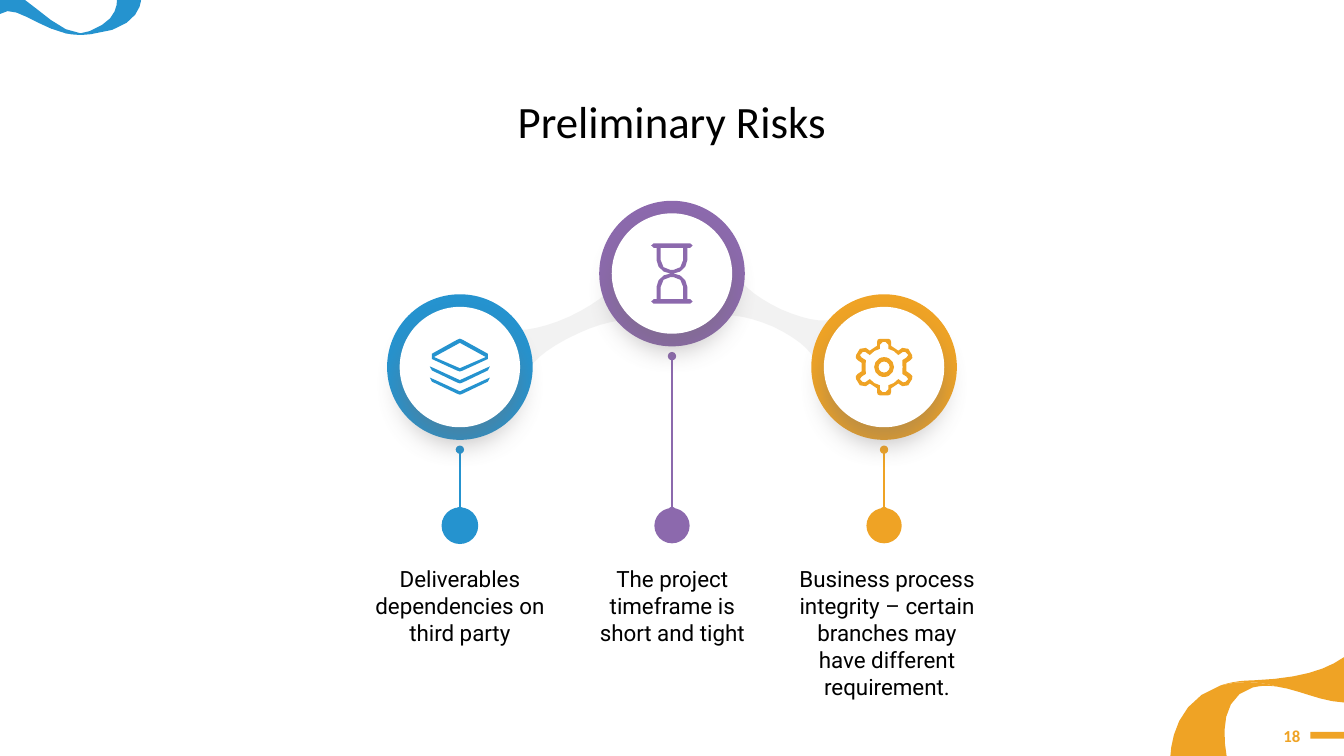
"""Build a slide that shows three preliminary project risks as linked icons."""
import math

import pptx
import pptx.dml.color
import pptx.enum.shapes
import pptx.enum.text
import pptx.oxml
import pptx.oxml.ns
import pptx.util

Pt = pptx.util.Pt
RGBColor = pptx.dml.color.RGBColor
SHAPES = pptx.enum.shapes.MSO_SHAPE
ALIGN = pptx.enum.text.PP_ALIGN

BLUE = RGBColor(0x25, 0x93, 0xCF)
PURPLE = RGBColor(0x8C, 0x69, 0xAD)
ORANGE = RGBColor(0xEF, 0xA3, 0x25)
GREY = RGBColor(0xF2, 0xF2, 0xF2)
WHITE = RGBColor(0xFF, 0xFF, 0xFF)
BLACK = RGBColor(0, 0, 0)
NAMESPACE = pptx.oxml.ns.nsdecls("a")
STEP_LENGTH, MOST_STEPS = 5, 6
RING_SIZE, DISC_SIZE, DOT_SIZE, HUB_SIZE = 104, 86, 25.2, 14.2
DOT_CENTRE, STEM_END, STEM_GAP, TEXT_TOP = 375.5, 365, 59, 400.3


def trace(start, *segments):
    """Return outline points for lines (x, y) and cubic curves (six numbers)."""
    points = [start]
    for segment in segments:
        if len(segment) == 2:
            points.append(segment)
            continue
        controls = [points[-1], segment[:2], segment[2:4], segment[4:]]
        length = sum(math.dist(a, b) for a, b in zip(controls, controls[1:]))
        steps = min(MOST_STEPS, max(1, round(length / STEP_LENGTH)))
        for step in range(1, steps + 1):
            t = step / steps
            weights = ((1 - t) ** 3, 3 * t * (1 - t) ** 2, 3 * t * t * (1 - t), t ** 3)
            points.append(tuple(sum(weight * control[axis] for weight, control in zip(weights, controls))
                                for axis in (0, 1)))
    return points


def flip(points, x_sign, y_sign):
    """Return the points with the signs of their axes changed."""
    return [(x * x_sign, y * y_sign) for x, y in points]


def mirror_sides(half):
    """Close a right half with its left half."""
    return half + [(-x, y) for x, y in reversed(half) if x]


def mirror_quarter(quarter):
    """Close an upper right quarter with the other three."""
    return mirror_sides(quarter + [(x, -y) for x, y in reversed(quarter) if y])


def hourglass_contours():
    """Return the outer edge and both bulbs of the hourglass."""
    edge = trace((13, -21.6), (14.8, -20), (13, -18.3), (11, -18.3), (11, -9.5), (11, -4.5, 6, 0, 1, 0))
    bulb = mirror_sides(trace((8, -18.3), (8, -9.5), (8, -5.5, 5, -2.5, 1, -2.5)))
    return [mirror_quarter(edge), bulb, flip(bulb, 1, -1)]


def gear_contours():
    """Return the outer and inner edges of the gear."""
    outer = trace((3, -20.2), (4.5, -19.6), (5, -18), (5, -15.2), (7, -14.6, 8.7, -13.4, 10.2, -11.7),
                  (13, -13.7), (15.2, -14.8, 16.2, -14.6, 17.3, -13), (20, -8.6),
                  (20.2, -6.5), (18.9, -5), (16, -3))
    inner = trace((1, -18), (3, -16), (3, -13), (6, -12.4, 8, -11, 10.2, -8.6),
                  (13.5, -10.9), (15.2, -10.8), (17.3, -8.6), (16, -6.8), (13, -4.9), (13.2, 0))
    return [mirror_quarter(outer), mirror_quarter(inner)]


def layers_contours():
    """Return a diamond and two chevrons below it."""
    outer = trace((0, -20.3), (2, -19.5), (20, -9.5), (21.7, -8.6, 21.7, -6.5, 20, -5.8), (2, 2.5), (0, 3.2))
    inner = [(0, -17.3), (18.5, -7.2), (0, 0.8)]
    chevron = [(0, 9.3), (18.5, 0.8), (21.5, -0.5), (20, 2.4), (2, 11), (0, 11.7)]
    lower = [(x, y + 8) for x, y in chevron]
    return [mirror_sides(half) for half in (outer, inner, chevron, lower)]


def paint(shape, colour):
    """Fill a shape and remove its line and shadow."""
    shape.shadow.inherit = False
    shape.fill.solid()
    shape.fill.fore_color.rgb = colour
    shape.line.fill.background()


def add_outline(slide, contours, colour, x=0, y=0):
    """Draw closed contours, moved by x and y, as one shape."""
    placed = [[(Pt(x + px), Pt(y + py)) for px, py in contour] for contour in contours]
    builder = slide.shapes.build_freeform(*placed[0][0], scale=1.0)
    builder.add_line_segments(placed[0][1:], close=True)
    for contour in placed[1:]:
        builder.move_to(*contour[0])
        builder.add_line_segments(contour[1:], close=True)
    paint(builder.convert_to_shape(), colour)


def add_circle(slide, x, y, size, colour, preset=SHAPES.OVAL):
    """Draw a filled round shape around a centre."""
    circle = slide.shapes.add_shape(preset, Pt(x - size / 2), Pt(y - size / 2), Pt(size), Pt(size))
    paint(circle, colour)
    return circle


def add_disc_shadow(disc):
    """Give the disc a soft shadow that falls straight down."""
    properties = disc.element.spPr
    properties.remove(properties.find(pptx.oxml.ns.qn("a:effectLst")))
    properties.append(pptx.oxml.parse_xml(
        f'<a:effectLst {NAMESPACE}><a:outerShdw blurRad="{Pt(18)}" dist="{Pt(12)}" dir="5400000" '
        'algn="t" rotWithShape="0"><a:srgbClr val="767171"><a:alpha val="40000"/></a:srgbClr>'
        '</a:outerShdw></a:effectLst>'))


def add_stem(slide, x, top, bottom, colour):
    """Draw a vertical line with a round head at both ends."""
    stem = slide.shapes.add_connector(pptx.enum.shapes.MSO_CONNECTOR.STRAIGHT,
                                      Pt(x), Pt(top), Pt(x), Pt(bottom))
    stem.line.color.rgb = colour
    stem.line.width = Pt(1)
    outline = stem.element.spPr.find(pptx.oxml.ns.qn("a:ln"))
    for end in ("headEnd", "tailEnd"):
        outline.append(pptx.oxml.parse_xml(f'<a:{end} {NAMESPACE} type="oval"/>'))
    stem.element.spPr.append(pptx.oxml.parse_xml(f"<a:effectLst {NAMESPACE}/>"))


def add_text(slide, box, text, font, size, colour=BLACK, alignment=ALIGN.CENTER, wrap=True, bold=False):
    """Add a text box with one run and return its frame."""
    frame = slide.shapes.add_textbox(*map(Pt, box)).text_frame
    frame.word_wrap = wrap
    paragraph = frame.paragraphs[0]
    paragraph.alignment = alignment
    run = paragraph.add_run()
    run.text = text
    run.font.name = font
    run.font.size = Pt(size)
    run.font.bold = bold
    run.font.color.rgb = colour
    return frame


def add_risk(slide, x, y, colour, contours, text, text_left, text_width, text_height):
    """Draw one risk: ring, icon, stem, dot and text."""
    add_stem(slide, x, y + STEM_GAP, STEM_END, colour)
    dot = add_circle(slide, x, DOT_CENTRE, DOT_SIZE, colour)
    if colour == BLUE:
        dot.line.color.rgb = colour
        dot.line.width = Pt(1)
    add_circle(slide, x, y, RING_SIZE, colour)
    add_disc_shadow(add_circle(slide, x, y, DISC_SIZE, WHITE))
    add_outline(slide, contours, colour, x, y)
    add_text(slide, (text_left, TEXT_TOP, text_width, text_height), text, "Roboto", 16)


def add_links(slide):
    """Draw the two grey bands between the rings."""
    right = trace((558, 221), (573.1, 227.5, 585.4, 230.4, 594, 228.2), (581, 255.6),
                  (578.2, 249.1, 567.4, 240.5, 552.2, 233.3), (537.1, 226.8, 522.7, 223.9, 516.2, 226.1),
                  (528.5, 198.7), (531.4, 205.2, 542.9, 213.8, 558, 221))
    left = trace((406.8, 226.1), (389.5, 234, 373.7, 236.9, 365.8, 235.4), (378.7, 262.8),
                 (382.3, 255.6, 395.3, 246.2, 412.6, 238.3), (429.1, 230.4, 445, 227.5, 452.9, 229),
                 (439.9, 201.6), (436.3, 208.8, 423.4, 218.2, 406.8, 226.1))
    for band in (right, left):
        add_outline(slide, [band], GREY)


def add_corners(slide):
    """Draw the ribbons in the two corners."""
    stalk = trace((895, 491), (900.7, 489.6, 905.8, 489.6, 911.5, 490.3),
                  (911.5, 490.3, 892.8, 483.8, 871.9, 489.6), (840.2, 500.4, 836.6, 530, 836, 540),
                  (876.2, 540), (873.4, 524.2, 871.9, 497.5, 895, 491))
    wave = trace((895, 486), (886.3, 486, 878.4, 487.4, 871.9, 489.6),
                 (892.8, 483.8, 911.5, 490.3, 911.5, 490.3), (927.4, 492.5, 943.2, 501.1, 960, 501.8),
                 (960, 469.4), (946.8, 478.8, 928.1, 484.6, 895, 486))
    hook = trace((100.8, -0.7), (83.5, -0.7), (83.5, -0.7, 85, 10.8, 72.7, 18), (64, 22.3),
                 (57.6, 23.8), (46.8, 23.8), (52.6, 25.2, 58.3, 25.2, 64.8, 24.5),
                 (101.5, 20.9, 100.8, -0.7, 100.8, -0.7))
    tail = trace((57.6, 23.8), (36.7, 23, 13.7, -12.2, 0, -5.8), (0, 10),
                 (10, 2.2, 25.2, 18.7, 46.8, 23.8))
    for ribbon, colour in ((stalk, ORANGE), (wave, ORANGE), (hook, BLUE), (tail, BLUE)):
        add_outline(slide, [ribbon], colour)


def main():
    """Build and save the slide."""
    presentation = pptx.Presentation()
    presentation.slide_width, presentation.slide_height = Pt(960), Pt(540)
    slide = presentation.slides.add_slide(presentation.slide_layouts[6])
    add_links(slide)
    add_risk(slide, 328.5, 262.2, BLUE, layers_contours(),
             "Deliverables dependencies on third party", 260, 137, 65.5)
    add_risk(slide, 480, 195.4, PURPLE, hourglass_contours(),
             "The project timeframe is short and tight", 411.7, 137, 65.5)
    add_risk(slide, 631.5, 262.2, ORANGE, gear_contours(),
             "Business process integrity – certain branches may have different requirement.",
             560.9, 145.4, 104.4)
    add_circle(slide, 631.5, 262.2, HUB_SIZE, ORANGE, SHAPES.DONUT).adjustments[0] = 0.22
    add_text(slide, (344.2, 63.4, 271.4, 46), "Preliminary Risks", "Calibri", 32, wrap=False)
    number = add_text(slide, (883.4, 511.2, 52.6, 28.8), "18", "Calibri", 12, ORANGE, ALIGN.RIGHT, bold=True)
    number.vertical_anchor = pptx.enum.text.MSO_ANCHOR.MIDDLE
    paint(slide.shapes.add_shape(SHAPES.RECTANGLE, Pt(936), Pt(522.7), Pt(24), Pt(5)), ORANGE)
    add_corners(slide)
    presentation.save("out.pptx")


if __name__ == "__main__":
    main()
